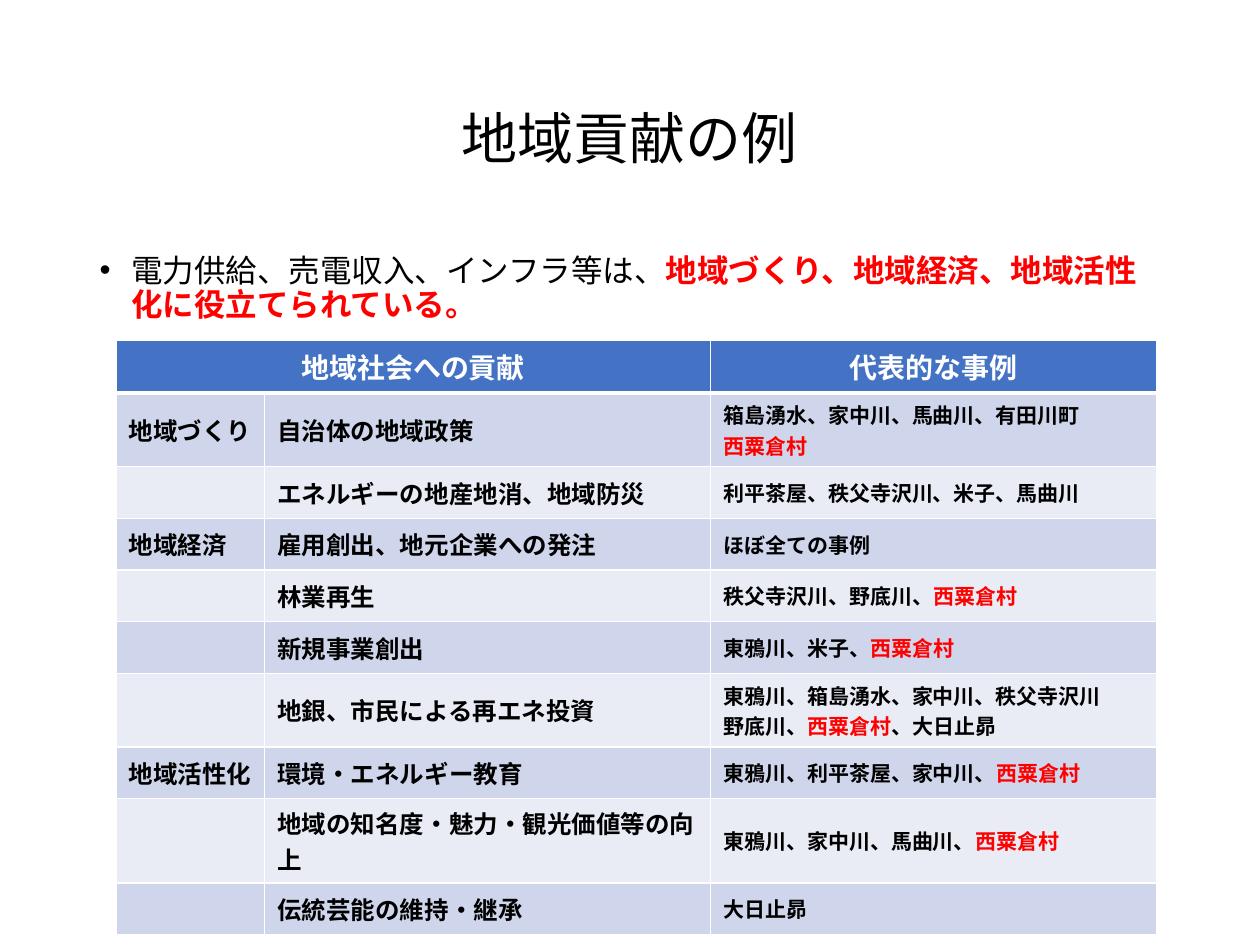
from lxml.etree import SubElement
from pptx import Presentation
from pptx.dml.color import RGBColor
from pptx.enum.text import MSO_ANCHOR, MSO_AUTO_SIZE, PP_ALIGN
from pptx.oxml.ns import qn
from pptx.util import Inches, Pt

FONT = "Noto Sans CJK JP"
COLORS = {"text": "000000", "accent": "FF0000", "header": "4472C4",
          "band_dark": "CFD5EA", "band_light": "E9EBF5", "white": "FFFFFF"}
WIDTH, HEIGHT = Inches(10), Inches(7.5)
COLUMN_WIDTHS = [1.18, 3.54, 3.54]
ROW_HEIGHT, TWO_CASE_LINES, TWO_TOPIC_LINES = 0.41, 0.58, 0.67
TOPIC_LINE_LENGTH = 17
HIGHLIGHT = "西粟倉村"

TITLE = "地域貢献の例"
LEAD = "電力供給、売電収入、インフラ等は、"
CONCLUSION = "地域づくり、地域経済、地域活性化に役立てられている。"
HEADINGS = ["地域社会への貢献", "", "代表的な事例"]
CONTRIBUTIONS = [
    ("地域づくり", "自治体の地域政策", "箱島湧水、家中川、馬曲川、有田川町\n西粟倉村"),
    ("", "エネルギーの地産地消、地域防災", "利平茶屋、秩父寺沢川、米子、馬曲川"),
    ("地域経済", "雇用創出、地元企業への発注", "ほぼ全ての事例"),
    ("", "林業再生", "秩父寺沢川、野底川、西粟倉村"),
    ("", "新規事業創出", "東鴉川、米子、西粟倉村"),
    ("", "地銀、市民による再エネ投資",
     "東鴉川、箱島湧水、家中川、秩父寺沢川\n野底川、西粟倉村、大日止昴"),
    ("地域活性化", "環境・エネルギー教育", "東鴉川、利平茶屋、家中川、西粟倉村"),
    ("", "地域の知名度・魅力・観光価値等の向上", "東鴉川、家中川、馬曲川、西粟倉村"),
    ("", "伝統芸能の維持・継承", "大日止昴"),
]


def rgb(name):
    return RGBColor.from_string(COLORS[name])


def set_attributes(target, values):
    for name, value in values.items():
        setattr(target, name, value)


def place(shape, left, top, width, height):
    """Position a shape by shares of the slide's size."""
    set_attributes(shape, {
        "left": int(WIDTH * left), "top": int(HEIGHT * top),
        "width": int(WIDTH * width), "height": int(HEIGHT * height)})


def add_run(paragraph, text, size, color="text", bold=False):
    run = paragraph.add_run()
    run.text = text
    set_attributes(run.font, {"size": Pt(size), "bold": bold, "name": FONT})
    run.font.color.rgb = rgb(color)
    SubElement(run.font._element, qn("a:ea"), typeface=FONT)


def add_title(slide):
    title = slide.shapes.title
    place(title, 0.069, 0.053, 0.862, 0.193)
    title.text_frame.vertical_anchor = MSO_ANCHOR.MIDDLE
    paragraph = title.text_frame.paragraphs[0]
    set_attributes(paragraph, {"alignment": PP_ALIGN.CENTER, "line_spacing": 0.9})
    add_run(paragraph, TITLE, 32)


def add_summary(slide):
    summary = slide.placeholders[1]
    place(summary, 0.069, 0.263, 0.862, 0.104)
    summary.text_frame.auto_size = MSO_AUTO_SIZE.NONE
    paragraph = summary.text_frame.paragraphs[0]
    set_attributes(paragraph, {"line_spacing": 0.9, "space_before": Pt(10)})
    properties = paragraph._p.get_or_add_pPr()
    properties.set("marL", str(Inches(0.25)))
    properties.set("indent", str(-Inches(0.25)))
    SubElement(properties, qn("a:buChar"), char="•")
    add_run(paragraph, LEAD, 18)
    add_run(paragraph, CONCLUSION, 18, "accent", bold=True)


def set_borders(cell, widths):
    """Draw white borders; widths are points for left, right, top, bottom."""
    properties = cell._tc.get_or_add_tcPr()
    for position, (side, width) in enumerate(zip("LRTB", widths)):
        line = SubElement(properties, qn(f"a:ln{side}"), w=str(Pt(width)))
        fill = SubElement(line, qn("a:solidFill"))
        SubElement(fill, qn("a:srgbClr"), val=COLORS["white"])
        properties.insert(position, line)


def fill_cell(cell, text, size, color, band, alignment):
    """Write bold text, one paragraph a line, with the highlight in red."""
    cell.fill.solid()
    cell.fill.fore_color.rgb = rgb(band)
    cell.vertical_anchor = MSO_ANCHOR.MIDDLE
    frame = cell.text_frame
    for number, line in enumerate(text.split("\n")):
        paragraph = frame.add_paragraph() if number else frame.paragraphs[0]
        paragraph.alignment = alignment
        before, found, after = line.partition(HIGHLIGHT)
        for part, part_color in ((before, color), (found, "accent"), (after, color)):
            if part:
                add_run(paragraph, part, size, part_color, bold=True)
        if not line:
            SubElement(paragraph._p, qn("a:endParaRPr"), sz=str(size * 100))


def row_height(topic, cases):
    """Leave room for a second line in either text column."""
    if len(topic) > TOPIC_LINE_LENGTH:
        return TWO_TOPIC_LINES
    return TWO_CASE_LINES if "\n" in cases else ROW_HEIGHT


def add_contributions(slide):
    rows = [HEADINGS, *CONTRIBUTIONS]
    heights = [row_height(topic, cases) for _, topic, cases in rows]
    table = slide.shapes.add_table(
        len(rows), len(COLUMN_WIDTHS), Inches(0.92), Inches(2.7),
        Inches(sum(COLUMN_WIDTHS)), Inches(sum(heights))).table
    for column, width in zip(table.columns, COLUMN_WIDTHS):
        column.width = Inches(width)
    for r, (texts, height) in enumerate(zip(rows, heights)):
        table.rows[r].height = Inches(height)
        for c, text in enumerate(texts):
            cell = table.cell(r, c)
            if r == 0:
                fill_cell(cell, text, 16, "white", "header", PP_ALIGN.CENTER)
            else:
                band = "band_dark" if r % 2 else "band_light"
                fill_cell(cell, text, 12 if c == 2 else 14, "text", band, PP_ALIGN.LEFT)
            set_borders(cell, (1, 1, 3 if r == 1 else 1, 3 if r == 0 else 1))
    table.cell(0, 0).merge(table.cell(0, 1))


def main():
    presentation = Presentation()
    set_attributes(presentation, {"slide_width": WIDTH, "slide_height": HEIGHT})
    slide = presentation.slides.add_slide(presentation.slide_layouts[1])
    add_title(slide)
    add_summary(slide)
    add_contributions(slide)
    presentation.save("out.pptx")


if __name__ == "__main__":
    main()
